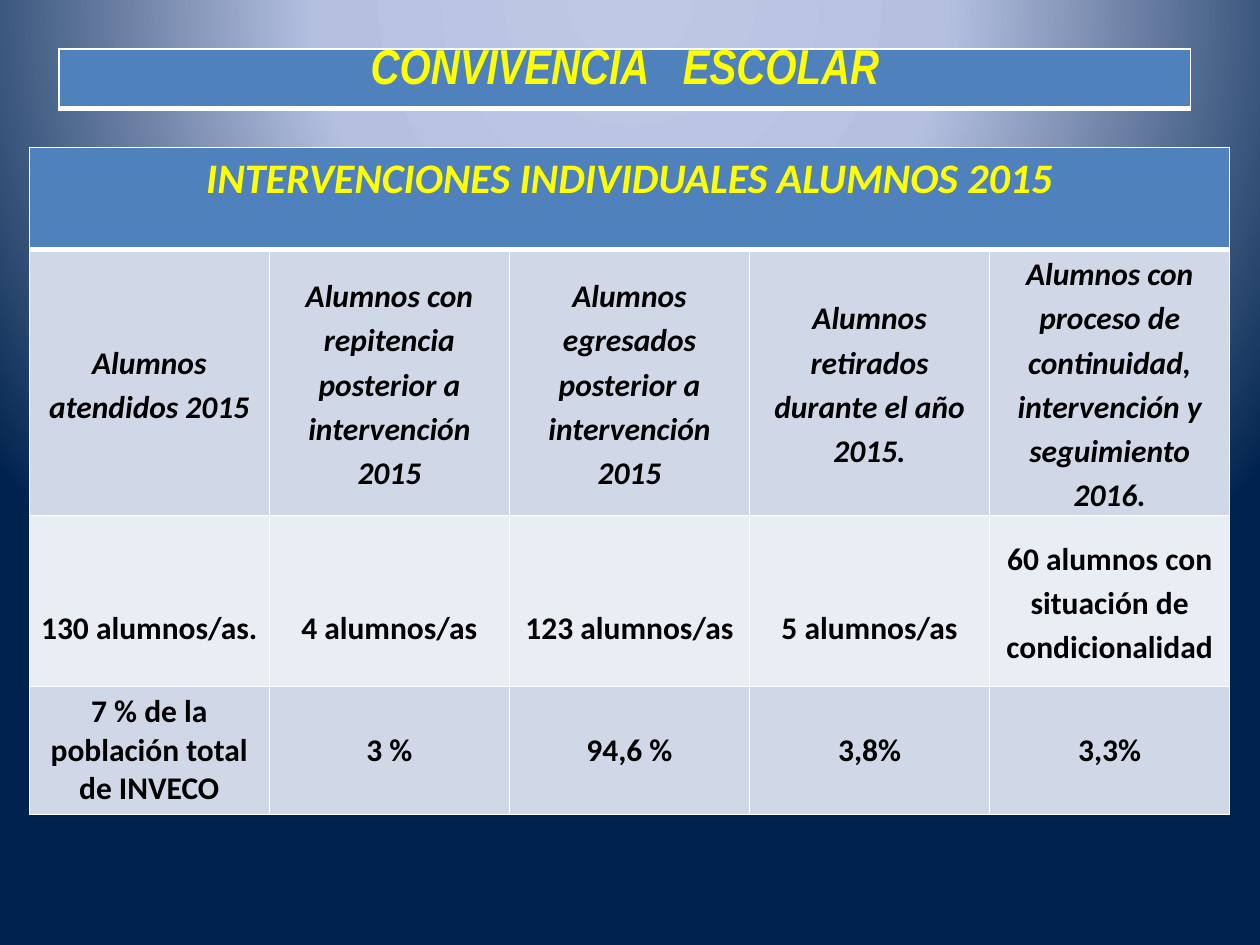
import pptx
import pptx.dml.color
import pptx.enum.text
import pptx.oxml
import pptx.oxml.ns
import pptx.util
from lxml import etree

Cm = pptx.util.Cm
Pt = pptx.util.Pt
ANCHOR = pptx.enum.text.MSO_ANCHOR
NS = pptx.oxml.ns.nsdecls("a")

BLUE, BAND, PALE, YELLOW = "4F81BD", "D0D8E8", "E9EDF4", "FFFF00"
BACKGROUND_STOPS = [(0, "BFC9E5"), (40, "B5C0E0"), (100, "00234D")]
LABELS = [
    "Alumnos atendidos 2015",
    "Alumnos con repitencia posterior a intervención 2015",
    "Alumnos egresados posterior a intervención 2015",
    "Alumnos retirados durante el año 2015.",
    "Alumnos con proceso de continuidad, intervención y seguimiento 2016.",
]
COUNTS = [
    "130 alumnos/as.", "4 alumnos/as", "123 alumnos/as", "5 alumnos/as",
    "60 alumnos con situación de condicionalidad",
]
SHARES = ["7 % de la población total de INVECO", "3 %", "94,6 %", "3,8%", "3,3%"]


def color(value):
    return pptx.dml.color.RGBColor.from_string(value)


def assign(target, values):
    for name, value in values.items():
        setattr(target, name, value)


class SlideWriter:
    font = {"name": "Calibri", "size": Pt(18), "bold": True, "italic": False}
    border = "FFFFFF"

    def __init__(self, page):
        self.page = page

    def background(self, stops):
        """Radial gradient centred above the page."""
        self.page.background.fill.gradient()
        gradient = self.page._element.find(".//" + pptx.oxml.ns.qn("a:gradFill"))
        marks = "".join(
            f'<a:gs pos="{place * 1000}"><a:srgbClr val="{value}"/></a:gs>'
            for place, value in stops)
        gradient.getparent().replace(gradient, pptx.oxml.parse_xml(
            f'<a:gradFill {NS} rotWithShape="1"><a:gsLst>{marks}</a:gsLst>'
            '<a:path path="circle"><a:fillToRect l="50000" t="-80000" '
            'r="50000" b="180000"/></a:path></a:gradFill>'))

    def table(self, left, top, width, heights, columns):
        frame = self.page.shapes.add_table(
            len(heights), columns, Cm(left), Cm(top), Cm(width), Cm(sum(heights)))
        grid = frame.table
        grid.horz_banding = False
        for row, height in zip(grid.rows, heights):
            row.height = Cm(height)
        for column in grid.columns:
            column.width = Cm(width / columns)
        return grid

    def cell(self, cell, text, fill, top=1, bottom=1, ink="000000",
             spacing=1.0, layout=None, **font):
        cell.fill.solid()
        cell.fill.fore_color.rgb = color(fill)
        self.borders(cell, top, bottom)
        assign(cell, {"vertical_anchor": ANCHOR.MIDDLE, **(layout or {})})
        para = cell.text_frame.paragraphs[0]
        assign(para, {"alignment": pptx.enum.text.PP_ALIGN.CENTER,
                      "line_spacing": spacing})
        return [self.span(para, part, ink, font)
                for part in ([text] if isinstance(text, str) else text)]

    def span(self, para, text, ink, font):
        span = para.add_run()
        span.text = text
        assign(span.font, {**self.font, **font})
        span.font.color.rgb = color(ink)
        return span

    def borders(self, cell, top, bottom):
        properties = cell._tc.get_or_add_tcPr()
        widths = {"lnL": 1, "lnR": 1, "lnT": top, "lnB": bottom}
        for index, (side, width) in enumerate(widths.items()):
            line = etree.fromstring(
                f'<a:{side} {NS} w="{Pt(width)}"><a:solidFill>'
                f'<a:srgbClr val="{self.border}"/></a:solidFill></a:{side}>')
            properties.insert(index, line)


def main():
    deck = pptx.Presentation()
    deck.slide_width, deck.slide_height = Cm(25.4), Cm(19.05)
    writer = SlideWriter(deck.slides.add_slide(deck.slide_layouts[6]))
    writer.background(BACKGROUND_STOPS)

    heading = writer.table(1.19, 0.99, 22.81, [1.2], 1)
    spans = writer.cell(
        heading.cell(0, 0), ["CONVIVENCIA", " ", "ESCOLAR"], BLUE, bottom=3,
        ink=YELLOW, name="Arial Narrow", size=Pt(28), italic=True,
        layout={"vertical_anchor": ANCHOR.TOP, "margin_top": 0, "margin_bottom": 0})
    spans[1].font._element.set("spc", "1280")  # widens the gap between the words

    grid = writer.table(0.59, 2.97, 24.2, [2.06, 5.36, 3.45, 2.58], 5)
    grid.cell(0, 0).merge(grid.cell(0, 4))
    writer.cell(grid.cell(0, 0), "INTERVENCIONES INDIVIDUALES ALUMNOS 2015", BLUE,
                bottom=3, ink=YELLOW, size=Pt(24), italic=True,
                layout={"vertical_anchor": ANCHOR.TOP})
    for column in range(1, 5):
        writer.borders(grid.cell(0, column), 1, 3)

    tight = {"margin_left": Cm(0.18), "margin_right": Cm(0.18),
             "margin_top": 0, "margin_bottom": 0}
    lowered = {**tight, "vertical_anchor": ANCHOR.TOP, "margin_top": Cm(1.78)}
    for column, (label, count, share) in enumerate(zip(LABELS, COUNTS, SHARES)):
        writer.cell(grid.cell(1, column), label, BAND, top=3, spacing=1.15,
                    layout=tight, italic=True)
        writer.cell(grid.cell(2, column), count, PALE, spacing=1.15,
                    layout=tight if column == 4 else lowered)
        writer.cell(grid.cell(3, column), share, BAND)

    deck.save("out.pptx")


if __name__ == "__main__":
    main()
